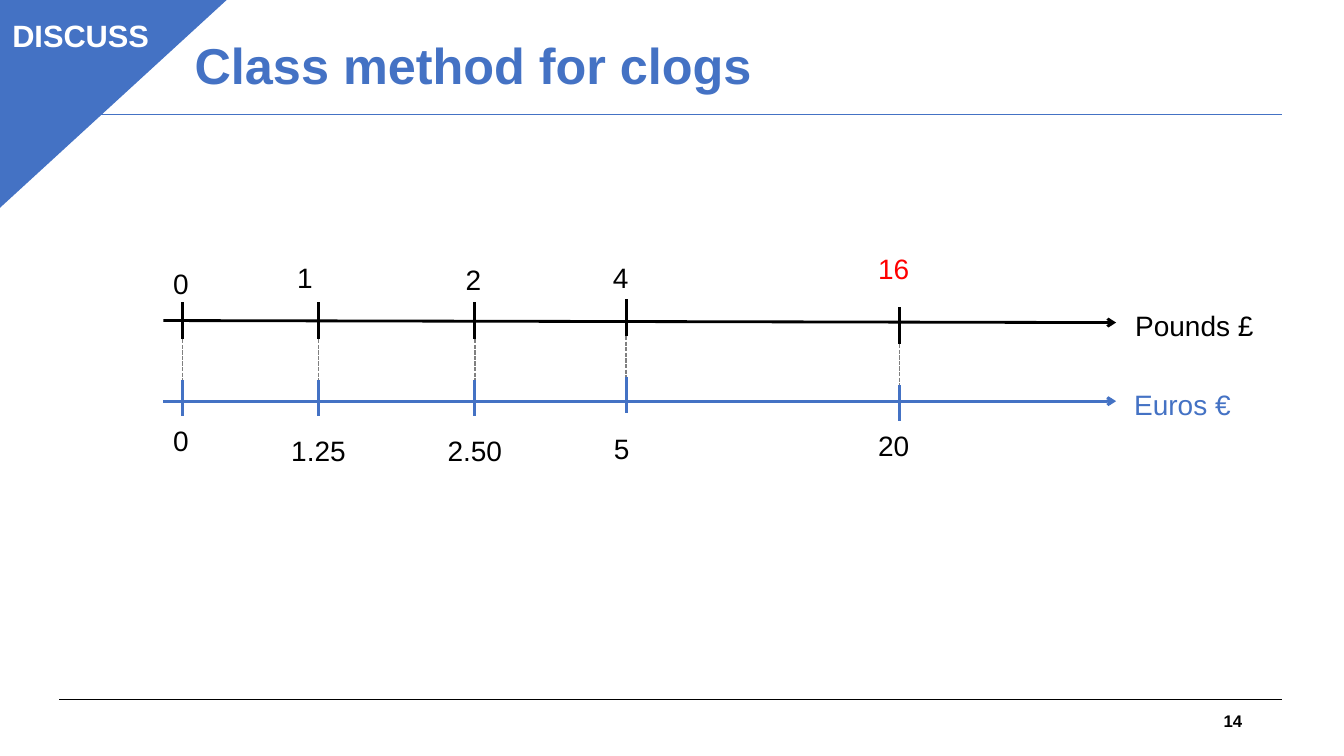
import dataclasses

import pptx
import pptx.dml.color
import pptx.enum.dml
import pptx.enum.shapes
import pptx.enum.text
import pptx.oxml.ns
import pptx.shapes.autoshape
import pptx.shapes.connector
import pptx.util
from lxml import etree

SHAPE = pptx.enum.shapes.MSO_SHAPE
ALIGN = pptx.enum.text.PP_ALIGN
ANCHOR = pptx.enum.text.MSO_ANCHOR
AUTO = pptx.enum.text.MSO_AUTO_SIZE

# The grid has square cells: 13.33 columns by 7.5 rows
COLS, ROWS = 13.33, 7.5
CELL = pptx.util.Inches(1)


@dataclasses.dataclass(frozen=True)
class Theme:
    font: str = "Arial"
    blue: str = "4472C4"
    black: str = "000000"
    white: str = "FFFFFF"
    grey: str = "808080"
    red: str = "FF0000"
    title: int = 36
    badge: int = 22
    label: int = 20
    page: int = 12
    hairline: float = 0.75
    thin: float = 1
    thick: float = 2


@dataclasses.dataclass(frozen=True)
class Axis:
    name: str
    color: str
    start_row: float
    end_row: float
    tick_row: float
    name_col: float
    name_row: float
    name_width: float


@dataclasses.dataclass(frozen=True)
class Label:
    text: str
    col: float
    row: float
    color: str


@dataclasses.dataclass(frozen=True)
class Mark:
    col: float
    shift: float
    labels: tuple[Label, Label]


T = Theme()
AXIS_LEFT, AXIS_RIGHT = 1.62, 11.07
TICK, DASH, DASH_OFFSET = 0.36, 0.78, 0.2
LABEL_HEIGHT = 0.44
LABEL_WIDTHS = {1: 0.36, 2: 0.51, 4: 0.75}

AXES = (
    Axis("Pounds £", T.black, 3.18, 3.2, 3.0, 11.16, 3.01, 1.39),
    Axis("Euros €", T.blue, 3.98, 3.98, 3.77, 11.15, 3.8, 1.17),
)
MARKS = (
    Mark(1.81, 0, (Label("0", 1.62, 2.59, T.black), Label("0", 1.62, 4.15, T.black))),
    Mark(3.16, 0, (Label("1", 2.85, 2.54, T.black), Label("1.25", 2.79, 4.25, T.black))),
    Mark(4.71, 0, (Label("2", 4.52, 2.56, T.black), Label("2.50", 4.34, 4.25, T.black))),
    Mark(6.21, -0.03, (Label("4", 5.98, 2.54, T.black), Label("5", 5.99, 4.23, T.black))),
    Mark(8.92, 0.05, (Label("16", 8.61, 2.45, T.red), Label("20", 8.61, 4.2, T.black))),
)


def cells(*counts: float) -> list[int]:
    return [round(n * CELL) for n in counts]


def rgb(color: str) -> pptx.dml.color.RGBColor:
    return pptx.dml.color.RGBColor.from_string(color)


def write(sp, text: str, *, size: float, color: str, bold: bool = False,
          align=ALIGN.LEFT, anchor=ANCHOR.TOP, wrap: bool = True,
          auto=AUTO.NONE, spacing: float = 1.0) -> None:
    tf = sp.text_frame
    tf.word_wrap, tf.auto_size, tf.vertical_anchor = wrap, auto, anchor
    p = tf.paragraphs[0]
    p.alignment, p.line_spacing = align, spacing
    r = p.add_run()
    r.text = text
    r.font.name, r.font.size, r.font.bold = T.font, pptx.util.Pt(size), bold
    r.font.color.rgb = rgb(color)


def add_label(s, text: str, col: float, row: float, width: float, color: str) -> None:
    sp = s.shapes.add_textbox(*cells(col, row, width, LABEL_HEIGHT))
    write(sp, text, size=T.label, color=color, wrap=False, auto=AUTO.SHAPE_TO_FIT_TEXT)


def add_line(s, x1: float, y1: float, x2: float, y2: float, color: str, width: float,
             *, dashed: bool = False, arrow: bool = False) -> pptx.shapes.connector.Connector:
    straight = pptx.enum.shapes.MSO_CONNECTOR.STRAIGHT
    sp = s.shapes.add_connector(straight, *cells(x1, y1, x2, y2))
    sp.line.color.rgb = rgb(color)
    sp.line.width = pptx.util.Pt(width)
    if dashed:
        sp.line.dash_style = pptx.enum.dml.MSO_LINE.SQUARE_DOT
    if arrow:
        ln = sp.line._get_or_add_ln()
        etree.SubElement(ln, pptx.oxml.ns.qn("a:tailEnd"), type="arrow")
    etree.SubElement(sp.element.spPr, pptx.oxml.ns.qn("a:effectLst"))
    return sp


def add_block(s, kind, left: float, top: float, width: float, height: float,
              line: float) -> pptx.shapes.autoshape.Shape:
    sp = s.shapes.add_shape(kind, *cells(left, top, width, height))
    sp.shadow.inherit = False
    sp.fill.solid()
    sp.fill.fore_color.rgb = rgb(T.blue)
    sp.line.color.rgb = rgb(T.blue)
    sp.line.width = pptx.util.Pt(line)
    return sp


def add_frame(s) -> None:
    # Rules above and below the content
    for row, color in ((6.94, T.black), (1.14, T.blue)):
        add_line(s, 0.59, row, 12.72, row, color, T.hairline)

    # Title and page number
    title = s.shapes.title
    title.left, title.top, title.width, title.height = cells(1.83, 0.12, 8.69, 1.11)
    write(title, "Class method for clogs", size=T.title, color=T.blue, bold=True,
          anchor=ANCHOR.MIDDLE, spacing=0.9)
    page = s.shapes.add_textbox(*cells(9.42, 6.95, 3, 0.4))
    write(page, "14", size=T.page, color=T.black, bold=True,
          align=ALIGN.RIGHT, anchor=ANCHOR.MIDDLE)

    # Corner badge
    corner = add_block(s, SHAPE.ISOSCELES_TRIANGLE, -0.03, -0.02, 2.29, 2.1, T.thin)
    corner.adjustments[0] = 0
    corner.element.spPr.xfrm.set("flipV", "1")
    badge = add_block(s, SHAPE.RECTANGLE, 0.01, 0.12, 1.58, 0.47, T.hairline)
    write(badge, "DISCUSS", size=T.badge, color=T.white, bold=True,
          align=ALIGN.CENTER, auto=AUTO.SHAPE_TO_FIT_TEXT)


def add_number_lines(s) -> None:
    # Dashed links between the two axes
    for mark in MARKS:
        top = AXES[0].tick_row + mark.shift + DASH_OFFSET
        add_line(s, mark.col, top, mark.col, top + DASH, T.grey, T.thin, dashed=True)

    # Each axis with its name, ticks and values
    for i, axis in enumerate(AXES):
        add_line(s, AXIS_LEFT, axis.start_row, AXIS_RIGHT, axis.end_row,
                 axis.color, T.thick, arrow=True)
        add_label(s, axis.name, axis.name_col, axis.name_row, axis.name_width, axis.color)
        for mark in MARKS:
            top = axis.tick_row + mark.shift
            add_line(s, mark.col, top, mark.col, top + TICK, axis.color, T.thick)
            label = mark.labels[i]
            add_label(s, label.text, label.col, label.row,
                      LABEL_WIDTHS[len(label.text)], label.color)


def main() -> None:
    prs = pptx.Presentation()
    prs.slide_width, prs.slide_height = cells(COLS, ROWS)
    s = prs.slides.add_slide(prs.slide_layouts[5])
    add_frame(s)
    add_number_lines(s)
    prs.save("out.pptx")


if __name__ == "__main__":
    main()
